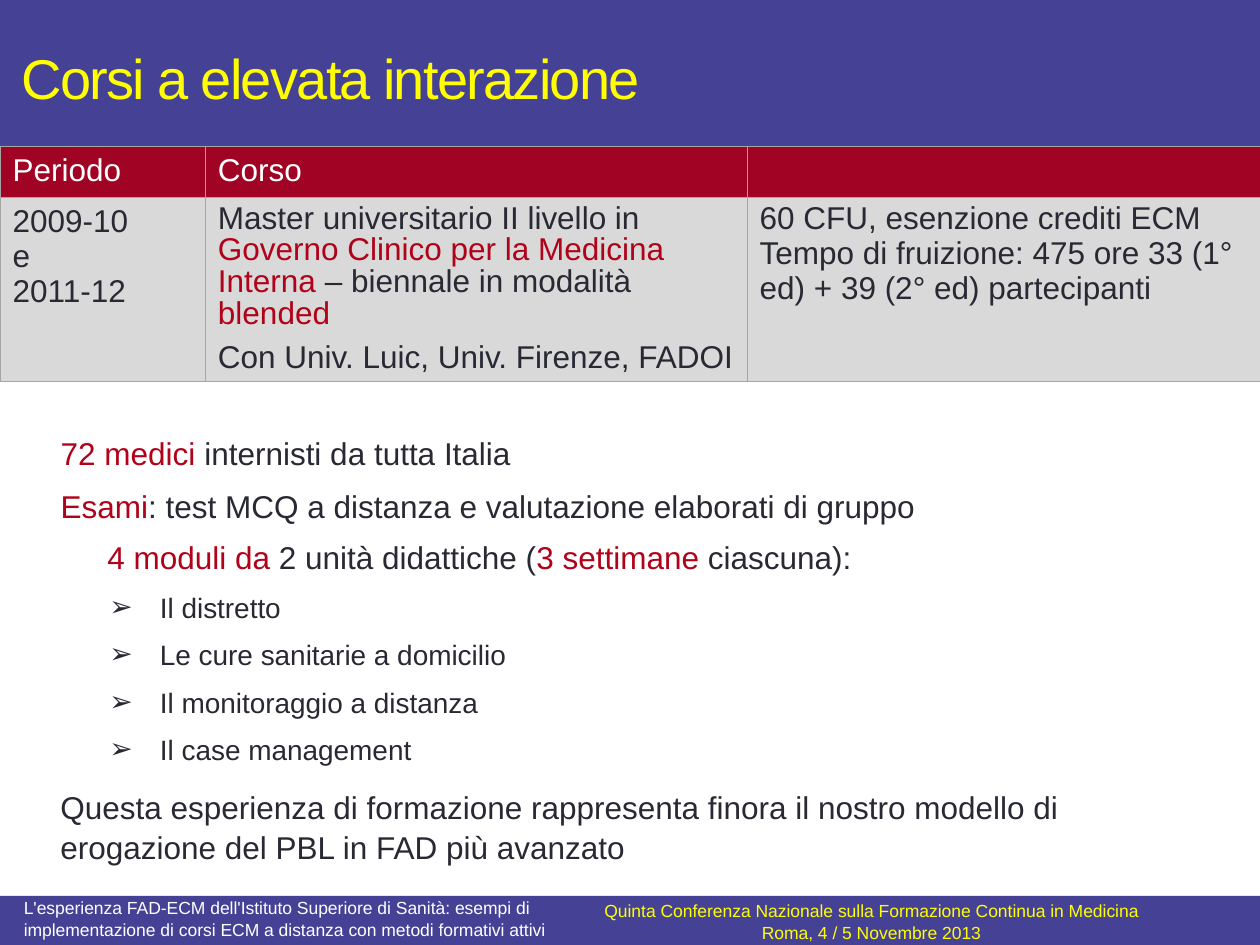
import pptx
import pptx.util
import pptx.dml.color
import pptx.enum.shapes
import pptx.enum.text
import pptx.oxml
import pptx.oxml.ns

Cm, Pt = pptx.util.Cm, pptx.util.Pt
RGB = pptx.dml.color.RGBColor
ALIGN = pptx.enum.text.PP_ALIGN
ANCHOR = pptx.enum.text.MSO_ANCHOR
qn = pptx.oxml.ns.qn

BLUE = RGB(0x45, 0x42, 0x96)
YELLOW = RGB(0xFF, 0xFF, 0x00)
WHITE = RGB(0xFF, 0xFF, 0xFF)
DARK = RGB(0x29, 0x29, 0x34)
RED = RGB(0xB0, 0x02, 0x19)
WINE = RGB(0xA1, 0x03, 0x24)
GREY = RGB(0xD9, 0xD9, 0xD9)
EDGE = RGB(0xA6, 0xA6, 0xA6)

PLAIN = {"line_spacing": 1.0}
TIGHT = {"line_spacing": 0.9, "space_before": Pt(7)}
LOOSE = {"line_spacing": 1.05, "space_before": Pt(0)}
ITEM = {"line_spacing": 1.05, "space_before": Pt(7)}
MID = {**LOOSE, "alignment": ALIGN.CENTER}

BARS = [(0, 18.06, 25.48, 1.02), (-0.03, 0, 25.48, 3.2)]
TITLE = [([("Corsi a elevata interazione", YELLOW)],
          {"alignment": ALIGN.LEFT})]

COLS = [4.14, 10.92, 10.34]
ROWS = [1.02, 3.07]
HEAD = ["Periodo", "Corso", ""]
CELLS = [
    [([(text, DARK)], PLAIN) for text in ("2009-10", "e", "2011-12")],
    [([("Master universitario II livello in ", DARK),
       ("Governo Clinico per la Medicina Interna", RED),
       (" – biennale in modalità ", DARK),
       ("blended", RED)], TIGHT),
     ([("Con Univ. Luic, Univ. Firenze, FADOI", DARK)], TIGHT)],
    [([("60 CFU, esenzione crediti ECM", DARK)], TIGHT),
     ([("Tempo di fruizione: 475 ore 33 (1° ed) + 39 (2° ed) partecipanti",
        DARK)], PLAIN)],
]

FACTS = [
    ([("72 medici", RED), (" internisti da tutta Italia", DARK)], TIGHT),
    ([("Esami", RED),
      (": test MCQ a distanza e valutazione elaborati di gruppo", DARK)],
     ITEM),
    ([("4 moduli da ", RED), ("2 unità didattiche (", DARK),
      ("3 settimane", RED), (" ciascuna):", DARK)], ITEM),
]
UNITS = ["Il distretto", "Le cure sanitarie a domicilio",
         "Il monitoraggio a distanza", "Il case management"]
DENTS = [(0.94, -0.94), (0.94, -0.94), (0.94, 0)] + [(2, -1.02)] * len(UNITS)

NOTES = [
    ((11.81, 18.11, 11.51, 0.91), 10, ANCHOR.MIDDLE, 0.13, [
        ([("Quinta Conferenza Nazionale sulla Formazione Continua in Medicina",
           YELLOW)], MID),
        ([("Roma, 4 / 5 Novembre 2013", YELLOW)], MID)]),
    ((0.97, 15.72, 23.16, 1.8), 18, ANCHOR.TOP, 0.13, [
        ([("Questa esperienza di formazione rappresenta finora il nostro "
           "modello di erogazione del PBL in FAD più avanzato", DARK)],
         LOOSE)]),
    ((0.23, 18.06, 11.33, 0.99), 10, ANCHOR.TOP, 0, [
        ([("L'esperienza FAD-ECM dell'Istituto Superiore di Sanità: esempi di "
           "implementazione di corsi ECM a distanza con metodi formativi "
           "attivi", WHITE)], LOOSE)]),
]


def style(obj, form):
    for key, val in form.items():
        setattr(obj, key, val)


def place(shape, box):
    style(shape, dict(zip(("left", "top", "width", "height"), map(Cm, box))))


def write(frame, paras, size):
    for num, (runs, form) in enumerate(paras):
        para = frame.paragraphs[0] if num == 0 else frame.add_paragraph()
        style(para, form)
        for text, color in runs:
            run = para.add_run()
            run.text = text
            style(run.font, {"name": "Arial", "size": Pt(size)})
            run.font.color.rgb = color


def frame_up(frame, anchor):
    style(frame, {"word_wrap": True, "vertical_anchor": anchor,
                  "auto_size": pptx.enum.text.MSO_AUTO_SIZE.NONE})


def border(cell):
    props = cell._tc.get_or_add_tcPr()
    for num, side in enumerate(("lnL", "lnR", "lnT", "lnB")):
        props.insert(num, pptx.oxml.parse_xml(
            f'<a:{side} {pptx.oxml.ns.nsdecls("a")} w="6350"><a:solidFill>'
            f'<a:srgbClr val="{EDGE}"/></a:solidFill></a:{side}>'))


def bullet(para, dent, mark):
    props = para._p.get_or_add_pPr()
    props.set("marL", str(Cm(dent[0])))
    props.set("indent", str(Cm(dent[1])))
    if mark:
        tint = pptx.oxml.ns.qn("a:buClr")
        clr = props.makeelement(tint, {})
        clr.append(clr.makeelement(qn("a:srgbClr"), {"val": str(DARK)}))
        props.append(clr)
        props.append(props.makeelement(qn("a:buChar"), {"char": "➢"}))
    else:
        props.append(props.makeelement(qn("a:buNone"), {}))


def main():
    deck = pptx.Presentation()
    style(deck, {"slide_width": Cm(25.4), "slide_height": Cm(19.05)})
    slide = deck.slides.add_slide(deck.slide_layouts[1])
    shapes = slide.shapes
    title, body = slide.placeholders

    for box in BARS:
        bar = shapes.add_shape(
            pptx.enum.shapes.MSO_SHAPE.RECTANGLE, *map(Cm, box))
        bar.shadow.inherit = False
        bar.fill.solid()
        bar.fill.fore_color.rgb = BLUE
        bar.line.fill.background()
        title.element.addprevious(bar.element)

    place(title, (0.18, 0.18, 19.05, 2.74))
    frame_up(title.text_frame, ANCHOR.MIDDLE)
    write(title.text_frame, TITLE, 32)
    run = title.text_frame.paragraphs[0].runs[0]
    run.font._element.set("spc", "-100")

    table = shapes.add_table(2, 3, 0, Cm(2.95), Cm(sum(COLS)),
                             Cm(sum(ROWS))).table
    for col, width in zip(table.columns, COLS):
        col.width = Cm(width)
    for row, height in zip(table.rows, ROWS):
        row.height = Cm(height)
    heads = [[([(text, WHITE)], PLAIN)] if text else [] for text in HEAD]
    for r, (line, fill) in enumerate(((heads, WINE), (CELLS, GREY))):
        for c, paras in enumerate(line):
            cell = table.cell(r, c)
            cell.fill.solid()
            cell.fill.fore_color.rgb = fill
            border(cell)
            write(cell.text_frame, paras, 18)
            for para in cell.text_frame.paragraphs:
                for run in para.runs:
                    run.font.bold = False

    place(body, (0.97, 8.71, 23.5, 6.73))
    frame_up(body.text_frame, ANCHOR.TOP)
    units = [([(text, DARK)], ITEM) for text in UNITS]
    write(body.text_frame, FACTS + units, 18)
    for num, (para, dent) in enumerate(zip(body.text_frame.paragraphs, DENTS)):
        mark = num >= len(FACTS)
        bullet(para, dent, mark)
        if mark:
            para.runs[0].font.size = Pt(16)

    for box, size, anchor, pad, paras in NOTES:
        frame = shapes.add_textbox(*map(Cm, box)).text_frame
        frame_up(frame, anchor)
        frame.margin_top = Cm(pad)
        write(frame, paras, size)

    deck.save("out.pptx")


if __name__ == "__main__":
    main()
